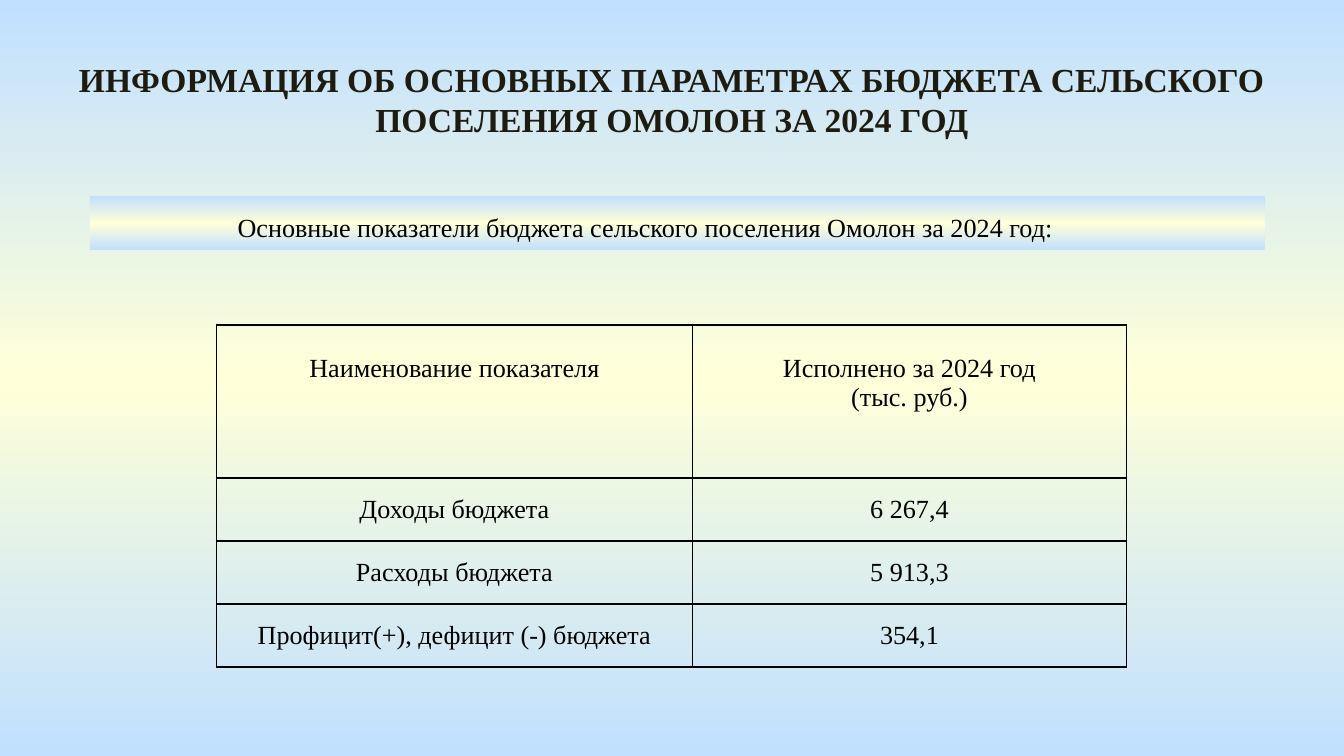
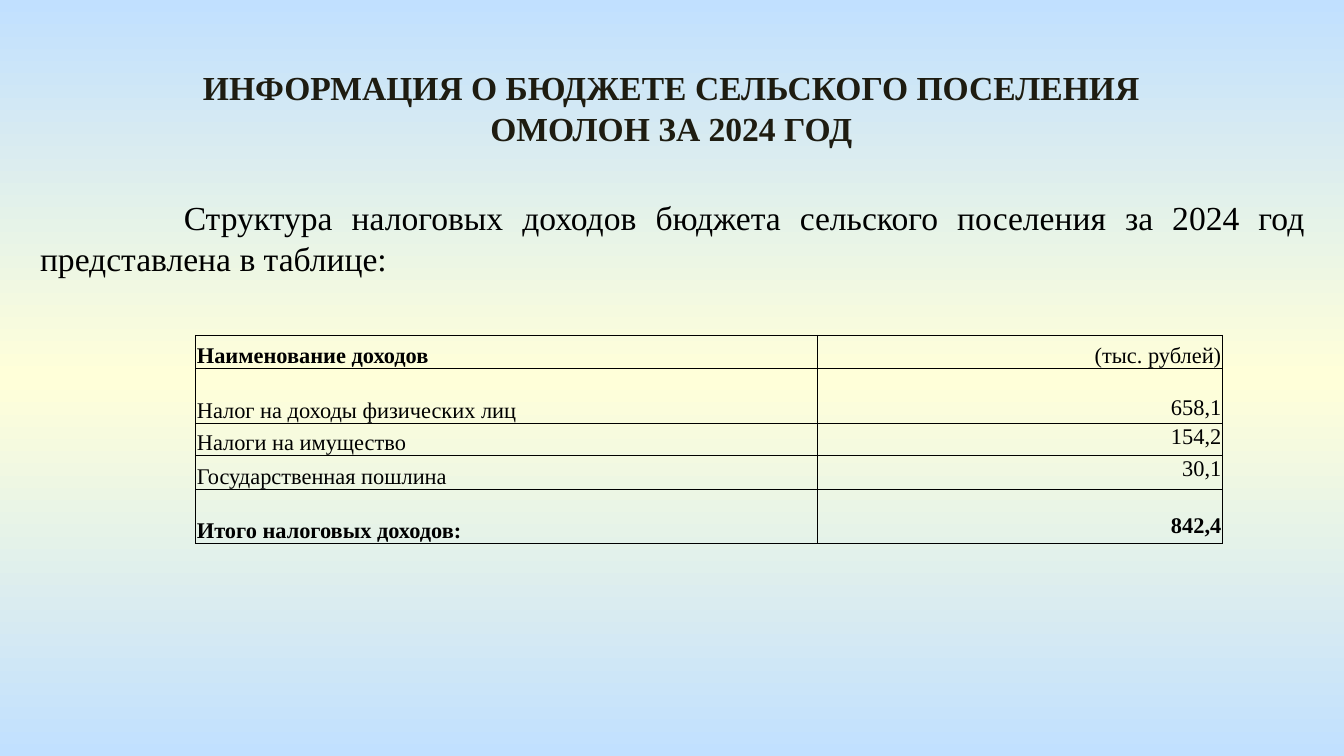
import copy

import lxml.etree
import pptx
import pptx.dml.color
import pptx.enum.shapes
import pptx.enum.text
import pptx.oxml.ns
import pptx.util

Pt = pptx.util.Pt
Align = pptx.enum.text.PP_ALIGN
Anchor = pptx.enum.text.MSO_ANCHOR
qn = pptx.oxml.ns.qn

FONT = "Times New Roman"
BLACK = "000000"
TITLE_COLOUR = "1E1C11"
SKY = "C1E0FF"
CREAM = "FFFFD9"


def colour(value):
    return pptx.dml.color.RGBColor.from_string(value)


def fill_gradient(fill, element):
    """Run sky, cream, sky from top to bottom; element is the XML that holds the fill."""
    fill.gradient()
    fill.gradient_angle = 270
    stops = next(element.iter(qn("a:gsLst")))
    stops.insert(1, copy.deepcopy(stops[0]))
    for stop, value, position in zip(fill.gradient_stops, (SKY, CREAM, SKY), (0, 0.5, 1)):
        stop.color.rgb = colour(value)
        stop.position = position


def format_text(frame, size, align, value=BLACK, bold=False):
    for para in frame.paragraphs:
        para.alignment = align
        for span in para.runs:
            span.font.name = FONT
            span.font.size = Pt(size)
            span.font.bold = bold
            span.font.color.rgb = colour(value)


def place(box, left, top, width, height):
    box.left, box.top, box.width, box.height = Pt(left), Pt(top), Pt(width), Pt(height)


def add_page(deck, title, left, top, width):
    page = deck.slides.add_slide(deck.slide_layouts[5])
    box = page.shapes.title
    place(box, left, top, width, 51)
    frame = box.text_frame
    frame.text = title
    frame.vertical_anchor = Anchor.TOP
    frame.auto_size = pptx.enum.text.MSO_AUTO_SIZE.SHAPE_TO_FIT_TEXT
    format_text(frame, 18, Align.CENTER, TITLE_COLOUR, True)
    return page


def write_intro(box, text, size, align, indent, inset):
    """Write one paragraph whose first line is indented."""
    frame = box.text_frame
    frame.word_wrap = True
    frame.vertical_anchor = Anchor.TOP
    frame.margin_top = Pt(inset)
    frame.text = text
    format_text(frame, size, align)
    properties = frame.paragraphs[0]._p.get_or_add_pPr()
    properties.set("marL", "0")
    properties.set("indent", str(Pt(indent)))


def set_borders(cell, width):
    properties = cell._tc.get_or_add_tcPr()
    for side in ("lnL", "lnR", "lnT", "lnB"):
        line = lxml.etree.SubElement(properties, qn("a:" + side), w=str(Pt(width)))
        solid = lxml.etree.SubElement(line, qn("a:solidFill"))
        lxml.etree.SubElement(solid, qn("a:srgbClr"), val=BLACK)


def add_table(page, left, top, widths, heights, rows, border):
    """Add a bordered, unfilled table and return it with its text unformatted."""
    table = page.shapes.add_table(
        len(rows), len(widths), Pt(left), Pt(top), Pt(sum(widths)), Pt(sum(heights))
    ).table
    table.first_row = table.horz_banding = False
    for column, width in zip(table.columns, widths):
        column.width = Pt(width)
    for row, height, texts in zip(table.rows, heights, rows):
        row.height = Pt(height)
        for cell, text in zip(row.cells, texts):
            set_borders(cell, border)
            cell.fill.background()
            cell.text_frame.text = text
    return table


def format_cell(cell, size, align, anchor, side, top=0, bold=False):
    cell.margin_left = cell.margin_right = Pt(side)
    cell.margin_top, cell.margin_bottom = Pt(top), Pt(0)
    cell.vertical_anchor = anchor
    format_text(cell.text_frame, size, align, bold=bold)


def add_budget_page(deck):
    page = add_page(
        deck,
        "ИНФОРМАЦИЯ ОБ ОСНОВНЫХ ПАРАМЕТРАХ БЮДЖЕТА СЕЛЬСКОГО ПОСЕЛЕНИЯ ОМОЛОН ЗА 2024 ГОД",
        25.2, 28, 669.6,
    )
    band = page.shapes.add_shape(
        pptx.enum.shapes.MSO_SHAPE.RECTANGLE, Pt(48.2), Pt(105), Pt(629.3), Pt(29)
    )
    band.shadow.inherit = False
    band.line.fill.background()
    fill_gradient(band.fill, band.element)
    write_intro(band, "Основные показатели бюджета сельского поселения Омолон за 2024 год:",
                14, Align.LEFT, 72, 8.2)

    rows = [
        ("Наименование показателя", "Исполнено за 2024 год\n(тыс. руб.)"),
        ("Доходы бюджета", "6 267,4"),
        ("Расходы бюджета", "5 913,3"),
        ("Профицит(+), дефицит (-) бюджета", "354,1"),
    ]
    table = add_table(page, 116, 174, (255, 232.5), (82, 33.8, 33.8, 33.8), rows, 1)
    for index, row in enumerate(table.rows):
        anchor, top = (Anchor.MIDDLE, 0) if index else (Anchor.TOP, 16)
        for cell in row.cells:
            format_cell(cell, 14, Align.CENTER, anchor, 5, top)


def add_tax_page(deck):
    page = add_page(deck, "ИНФОРМАЦИЯ О БЮДЖЕТЕ СЕЛЬСКОГО ПОСЕЛЕНИЯ ОМОЛОН ЗА 2024 ГОД",
                    81.4, 32.4, 556.6)
    intro = page.shapes.add_textbox(Pt(14.4), Pt(101), Pt(692), Pt(51))
    write_intro(
        intro,
        "Структура налоговых доходов бюджета сельского поселения за 2024 год представлена в таблице:",
        18, Align.JUSTIFY, 77, 4.7,
    )

    rows = [
        ("Наименование доходов", "(тыс. рублей)"),
        ("Налог на доходы физических лиц", "658,1"),
        ("Налоги на имущество", "154,2"),
        ("Государственная пошлина", "30,1"),
        ("Итого налоговых доходов:", "842,4"),
    ]
    heights = (17.6, 29.4, 17.2, 18.2, 29)
    table = add_table(page, 104.8, 179.6, (333.2, 217), heights, rows, 0.5)
    amount_tops = (0.7, 14.5, 0.7, 0.7, 13)
    last = len(rows) - 1
    for index, (row, top) in enumerate(zip(table.rows, amount_tops)):
        name, amount = row.cells
        format_cell(name, 12, Align.JUSTIFY, Anchor.BOTTOM, 0.7, 0.7, index in (0, last))
        anchor = Anchor.TOP if index else Anchor.BOTTOM
        format_cell(amount, 12, Align.RIGHT, anchor, 0.7, top, index == last)


def main():
    deck = pptx.Presentation()
    deck.slide_width, deck.slide_height = Pt(720), Pt(405)
    master = deck.slide_master
    fill_gradient(master.background.fill, master.element)
    add_budget_page(deck)
    add_tax_page(deck)
    deck.save("out.pptx")


if __name__ == "__main__":
    main()
